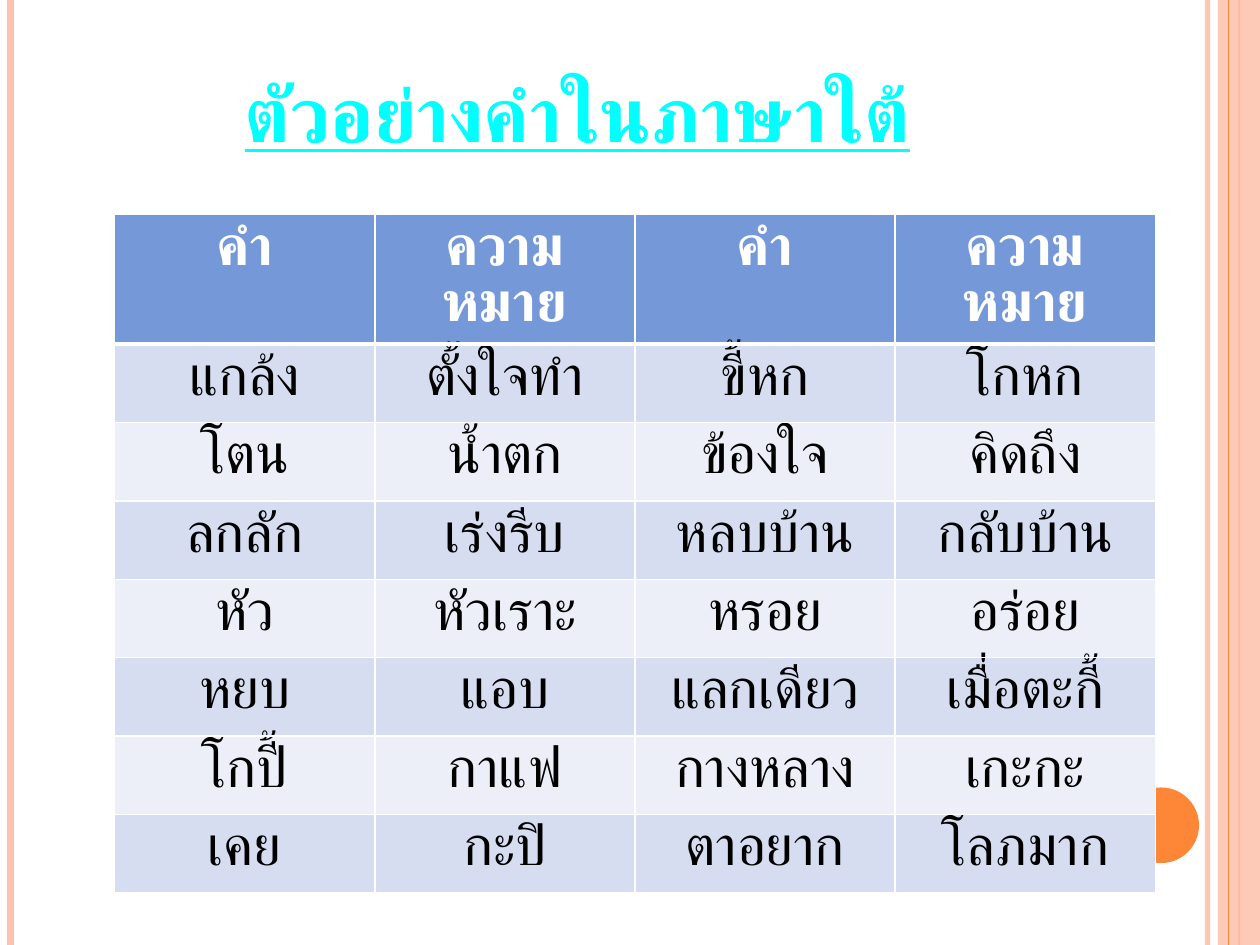
from pptx import Presentation
from pptx.dml.color import RGBColor
from pptx.enum import shapes, text
from pptx.oxml import parse_xml
from pptx.oxml.ns import nsdecls, qn
from pptx.util import Pt
from lxml import etree

FONT = "Cambria"
WHITE = RGBColor(0xFF, 0xFF, 0xFF)
BLACK = RGBColor(0, 0, 0)
CYAN = RGBColor(0, 0xFF, 0xFF)
PEACH = RGBColor(0xFE, 0xC3, 0xAE)
ORANGE = RGBColor(0xFE, 0x86, 0x37)
BLUE = RGBColor(0x75, 0x98, 0xD9)
BANDS = (RGBColor(0xD6, 0xDD, 0xF1), RGBColor(0xEC, 0xEF, 0xF8))

TITLE = "ตัวอย่างคำในภาษาใต้"
ROWS = [
    ("คำ", "ความหมาย", "คำ", "ความหมาย"),
    ("แกล้ง", "ตั้งใจทำ", "ขี้หก", "โกหก"),
    ("โตน", "น้ำตก", "ข้องใจ", "คิดถึง"),
    ("ลกลัก", "เร่งรีบ", "หลบบ้าน", "กลับบ้าน"),
    ("หัว", "หัวเราะ", "หรอย", "อร่อย"),
    ("หยบ", "แอบ", "แลกเดียว", "เมื่อตะกี้"),
    ("โกปี้", "กาแฟ", "กางหลาง", "เกะกะ"),
    ("เคย", "กะปิ", "ตาอยาก", "โลภมาก"),
]
W, H = 720, 540
COL_W, ROW_H = 148.7, 44.8
LINE_SPACING = 0.87


def set_alpha(fill, percent):
    color = fill._xPr.find(qn("a:solidFill"))[0]
    etree.SubElement(color, qn("a:alpha")).set("val", str(percent * 1000))


def add_stripe(s, x, width, color, alpha=100):
    line = s.shapes.add_connector(shapes.MSO_CONNECTOR.STRAIGHT, Pt(x), Pt(0), Pt(x), Pt(H))
    line.line.width = Pt(width)
    line.line.color.rgb = color
    if alpha < 100:
        set_alpha(line.line.fill, alpha)
    etree.SubElement(line._element.spPr, qn("a:effectLst"))


def add_filled(s, kind, box, color, alpha=100):
    sp = s.shapes.add_shape(kind, *map(Pt, box))
    sp.shadow.inherit = False
    sp.fill.solid()
    sp.fill.fore_color.rgb = color
    sp.line.fill.background()
    if alpha < 100:
        set_alpha(sp.fill, alpha)


def write(tf, words, size, color, bold):
    p = tf.paragraphs[0]
    p.alignment = text.PP_ALIGN.CENTER
    p.line_spacing = LINE_SPACING
    r = p.add_run()
    r.text = words
    r.font.name = FONT
    r.font.size = Pt(size)
    r.font.bold = bold
    r.font.color.rgb = color
    etree.SubElement(r._r.get_or_add_rPr(), qn("a:cs")).set("typeface", FONT)
    return r


def add_borders(cell, top, bottom):
    tc_pr = cell._tc.get_or_add_tcPr()
    for i, (side, width) in enumerate((("L", 1), ("R", 1), ("T", top), ("B", bottom))):
        tc_pr.insert(i, parse_xml(
            f'<a:ln{side} {nsdecls("a")} w="{Pt(width)}"><a:solidFill>'
            f'<a:srgbClr val="{WHITE}"/></a:solidFill></a:ln{side}>'))


def add_word_table(s):
    cols = len(ROWS[0])
    table = s.shapes.add_table(len(ROWS), cols, Pt(65.5), Pt(122.6),
                               Pt(COL_W * cols), Pt(ROW_H * len(ROWS))).table
    for col in table.columns:
        col.width = Pt(COL_W)
    for i, words in enumerate(ROWS):
        table.rows[i].height = Pt(ROW_H)
        header = i == 0
        for j, word in enumerate(words):
            cell = table.cell(i, j)
            cell.fill.solid()
            cell.fill.fore_color.rgb = BLUE if header else BANDS[(i - 1) % 2]
            add_borders(cell, 3 if i == 1 else 1, 3 if header else 1)
            write(cell.text_frame, word, 32, WHITE if header else BLACK, header)


def main():
    prs = Presentation()
    prs.slide_width, prs.slide_height = Pt(W), Pt(H)
    s = prs.slides.add_slide(prs.slide_layouts[6])

    add_stripe(s, 690, 3, PEACH, 93)
    add_stripe(s, 6, 4.5, PEACH)
    add_stripe(s, 708, 1.5, ORANGE)
    add_filled(s, shapes.MSO_SHAPE.RECTANGLE, (696, 0, 24, H), PEACH, 87)
    add_stripe(s, 702, 0.75, ORANGE)
    add_filled(s, shapes.MSO_SHAPE.OVAL, (642, 450, 43.2, 43.2), ORANGE)

    tf = s.shapes.add_textbox(Pt(36), Pt(21.6), Pt(588), Pt(72.7)).text_frame
    tf.word_wrap = True
    tf.vertical_anchor = text.MSO_ANCHOR.BOTTOM
    r = write(tf, TITLE, 44, CYAN, True)
    r.font.underline = True
    r._r.rPr.set("cap", "small")

    add_word_table(s)
    prs.save("out.pptx")


if __name__ == "__main__":
    main()
